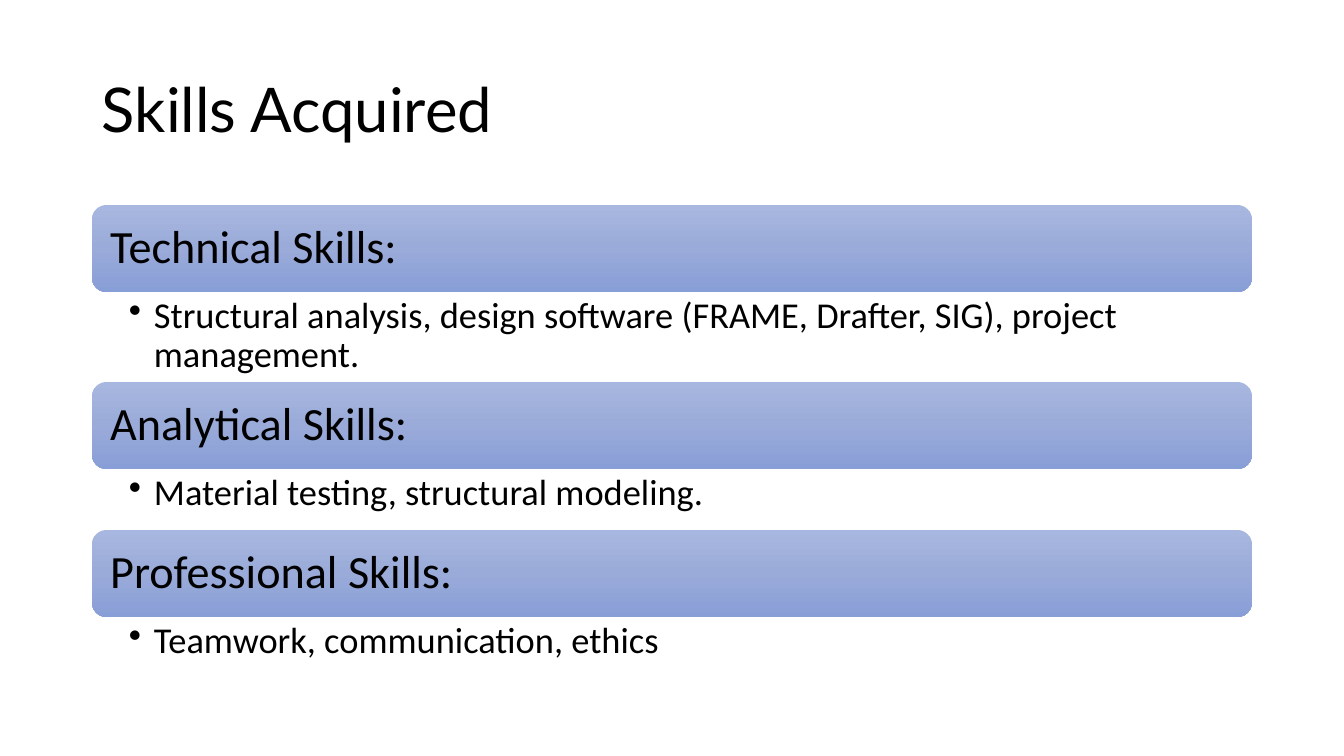
"""Build the Skills Acquired slide: three headed bars, each with a bullet below."""
from copy import deepcopy

from lxml import etree
from pptx import Presentation, util as u
from pptx.dml.color import RGBColor
from pptx.enum import shapes, text
from pptx.oxml.ns import qn

TITLE = "Skills Acquired"
SKILLS = [
    ("Technical Skills:",
     "Structural analysis, design software (FRAME, Drafter, SIG), project management.", 90),
    ("Analytical Skills:", "Material testing, structural modeling.", 61),
    ("Professional Skills:", "Teamwork, communication, ethics", 61),
]
COLORS = {"text": "000000", "top": "A8B7DF", "middle": "9AABD9", "bottom": "889ED7"}
STYLES = {
    "title": {"name": "Lato", "size": u.Pt(44)},
    "heading": {"name": "Calibri", "size": u.Pt(33)},
    "detail": {"name": "Calibri", "size": u.Pt(26)},
}
SCALE = 914400 / 100.8
LEFT, WIDTH = 92, 1160
TITLE_TOP, TITLE_HEIGHT = 40, 146
FIRST_BAR, BAR_HEIGHT = 205, 87
BULLET_INDENT = 25


def px(length):
    return u.Emu(round(length * SCALE))


def write(box, words, style, anchor, margins, bullet=False):
    frame = box.text_frame
    sides = ("margin_left", "margin_top", "margin_right", "margin_bottom")
    layout = {"word_wrap": True, "vertical_anchor": anchor,
              **dict(zip(sides, map(px, margins)))}
    for name, value in layout.items():
        setattr(frame, name, value)
    para = frame.paragraphs[0]
    para.alignment = text.PP_ALIGN.LEFT
    para.line_spacing = 0.9
    if bullet:
        props = para._p.get_or_add_pPr()
        props.set("marL", str(px(BULLET_INDENT)))
        props.set("indent", str(-px(BULLET_INDENT)))
        etree.SubElement(props, qn("a:buChar")).set("char", "•")
    span = para.add_run()
    span.text = words
    for name, value in STYLES[style].items():
        setattr(span.font, name, value)
    span.font.color.rgb = RGBColor.from_string(COLORS["text"])


def shade(bar):
    bar.shadow.inherit = False
    bar.line.fill.background()
    bar.fill.gradient()
    bar.fill.gradient_angle = 270
    stops = bar._element.spPr.find(qn("a:gradFill")).find(qn("a:gsLst"))
    stops.insert(1, deepcopy(stops[0]))
    for stop, place, tone in zip(bar.fill.gradient_stops, (0, 0.5, 1),
                                 ("top", "middle", "bottom")):
        stop.position = place
        stop.color.rgb = RGBColor.from_string(COLORS[tone])


def main():
    deck = Presentation()
    deck.slide_width, deck.slide_height = px(1344), px(756)
    page = deck.slides.add_slide(deck.slide_layouts[6])
    title = page.shapes.add_textbox(px(LEFT), px(TITLE_TOP), px(WIDTH), px(TITLE_HEIGHT))
    write(title, TITLE, "title", text.MSO_ANCHOR.MIDDLE, (10, 5, 10, 5))
    top = FIRST_BAR
    for heading, detail, height in SKILLS:
        bar = page.shapes.add_shape(shapes.MSO_SHAPE.ROUNDED_RECTANGLE,
                                    px(LEFT), px(top), px(WIDTH), px(BAR_HEIGHT))
        shade(bar)
        write(bar, heading, "heading", text.MSO_ANCHOR.MIDDLE, (14, 14, 14, 14))
        top += BAR_HEIGHT
        box = page.shapes.add_textbox(px(LEFT), px(top), px(WIDTH), px(height))
        write(box, detail, "detail", text.MSO_ANCHOR.TOP, (37, 5, 26, 5), bullet=True)
        top += height
    deck.save("out.pptx")


if __name__ == "__main__":
    main()
